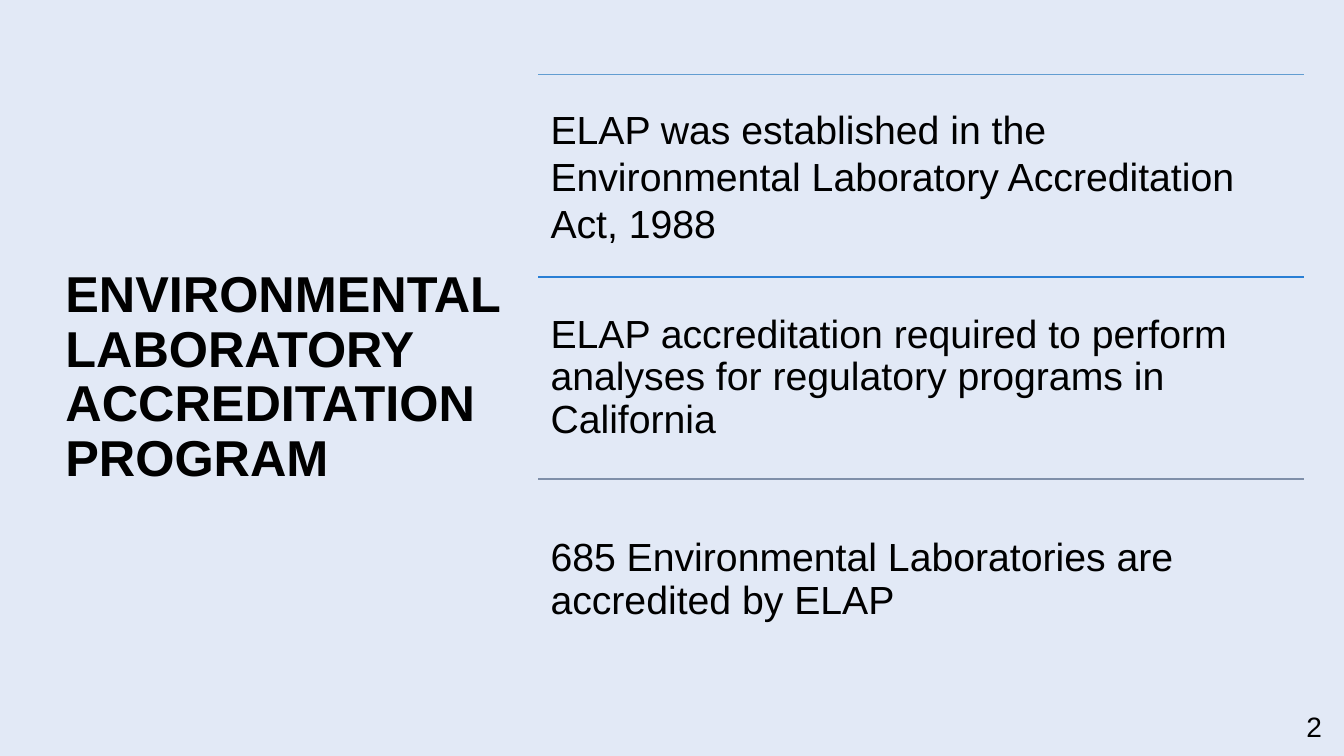
from pptx import Presentation
from pptx.dml.color import RGBColor
from pptx.enum.shapes import MSO_CONNECTOR
from pptx.enum.text import MSO_ANCHOR, PP_ALIGN
from pptx.oxml.ns import qn
from pptx.util import Inches, Pt
from lxml.etree import SubElement

COLORS = {
    "background": "E2E9F6",
    "text": "000000",
    "blue": "629DD1",
    "strong_blue": "297FD5",
    "slate": "7F8FA9",
}


class SlideBuilder:
    """Holds the shared style and the slide being built."""

    font = "Arial"

    def __init__(self, slide):
        self.slide = slide

    def color(self, name):
        return RGBColor.from_string(COLORS[name])

    def background(self, name):
        fill = self.slide.background.fill
        fill.solid()
        fill.fore_color.rgb = self.color(name)

    def text(self, words, left, top, width, height, size, bold=False,
             align=PP_ALIGN.LEFT, line_spacing=1.0, space_after=0,
             inset_x=0.1, inset_y=0.05):
        box = self.slide.shapes.add_textbox(
            Inches(left), Inches(top), Inches(width), Inches(height))
        frame = box.text_frame
        frame.word_wrap = True
        frame.vertical_anchor = MSO_ANCHOR.MIDDLE
        frame.margin_left = frame.margin_right = Inches(inset_x)
        frame.margin_top = frame.margin_bottom = Inches(inset_y)
        paragraph = frame.paragraphs[0]
        paragraph.alignment = align
        paragraph.line_spacing = line_spacing
        paragraph.space_after = Pt(space_after)
        run = paragraph.add_run()
        run.text = words
        run.font.name = self.font
        run.font.size = Pt(size)
        run.font.bold = bold
        run.font.color.rgb = self.color("text")

    def rule(self, left, top, width, color):
        """Draws a thin horizontal divider."""
        divider = self.slide.shapes.add_connector(
            MSO_CONNECTOR.STRAIGHT, Inches(left), Inches(top),
            Inches(left + width), Inches(top))
        divider.line.color.rgb = self.color(color)
        divider.line.width = Pt(1)
        SubElement(divider.element.spPr, qn("a:effectLst"))


FACTS = [
    ("ELAP was established in the Environmental Laboratory Accreditation "
     "Act, 1988", "blue", 1.0, 0),
    ("ELAP accreditation required to perform analyses for regulatory "
     "programs in California", "strong_blue", 0.9, 9.8),
    ("685 Environmental Laboratories are accredited by ELAP",
     "slate", 0.9, 9.8),
]
FACTS_LEFT, FACTS_TOP, FACTS_WIDTH = 5.34, 0.74, 7.59
FACT_HEIGHT = 6.02 / len(FACTS)


def main():
    presentation = Presentation()
    presentation.slide_width = Inches(13.33)
    presentation.slide_height = Inches(7.5)
    builder = SlideBuilder(
        presentation.slides.add_slide(presentation.slide_layouts[6]))
    builder.background("background")

    builder.text("ENVIRONMENTAL LABORATORY ACCREDITATION PROGRAM",
                 0.55, FACTS_TOP, 4.61, 6.02, 36, bold=True, line_spacing=0.9)

    for index, (fact, color, line_spacing, space_after) in enumerate(FACTS):
        top = FACTS_TOP + index * FACT_HEIGHT
        builder.rule(FACTS_LEFT, top, FACTS_WIDTH, color)
        builder.text(fact, FACTS_LEFT, top, FACTS_WIDTH, FACT_HEIGHT, 28,
                     line_spacing=line_spacing, space_after=space_after,
                     inset_x=0.12, inset_y=0.12)

    builder.text("2", 12.66, 6.76, 0.55, 0.89, 20, align=PP_ALIGN.RIGHT)
    presentation.save("out.pptx")


if __name__ == "__main__":
    main()
